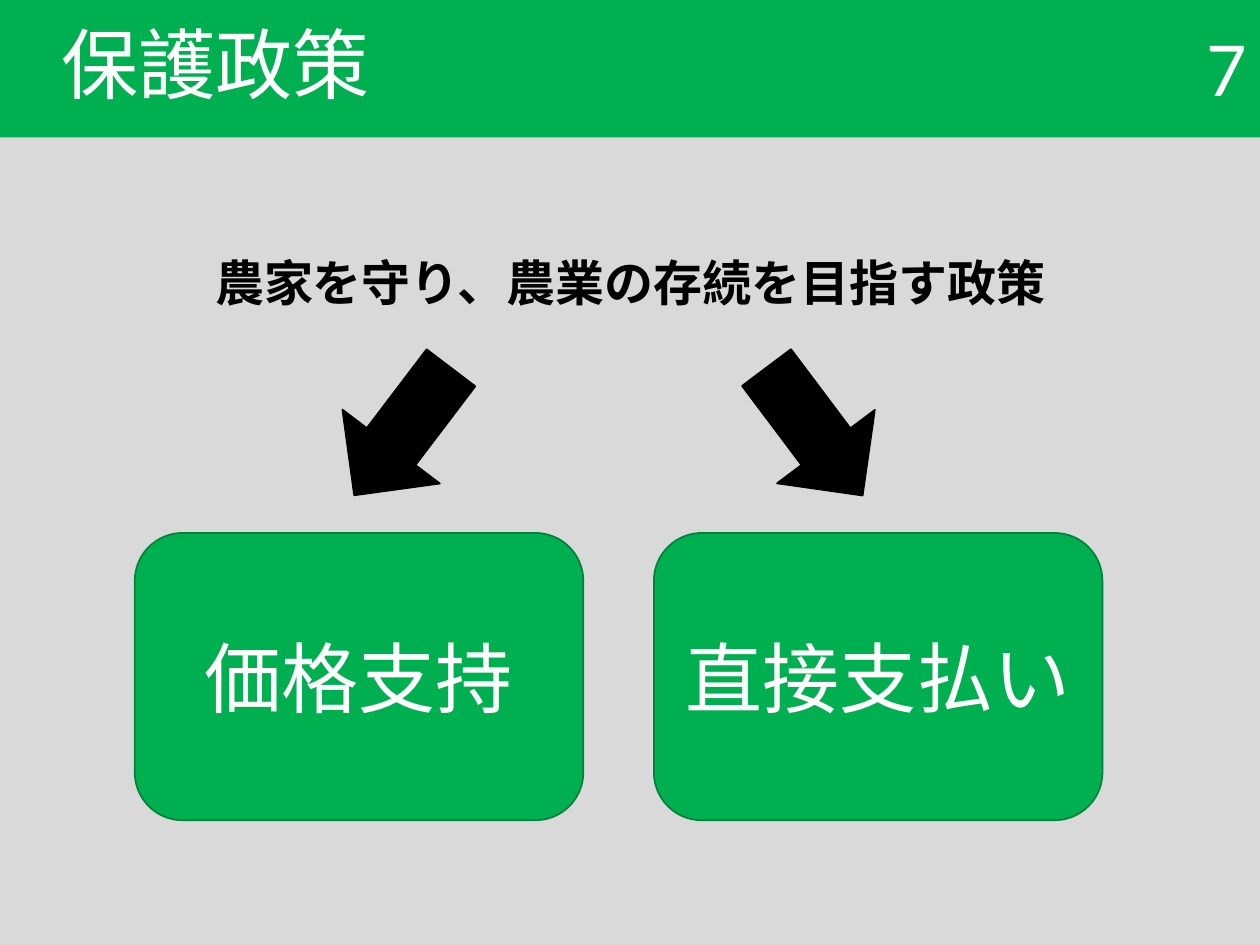
from lxml.etree import SubElement
from pptx import Presentation
from pptx.dml.color import RGBColor
from pptx.enum.shapes import MSO_SHAPE as Shape
from pptx.enum.text import MSO_ANCHOR as Anchor, MSO_AUTO_SIZE as AutoSize, PP_ALIGN as Align
from pptx.oxml.ns import qn
from pptx.util import Inches, Pt

GREEN, EDGE, GREY, BLACK, WHITE = "00B050", "00823B", "D9D9D9", "000000", "FFFFFF"


def paint(target, color):
    if hasattr(target, "solid"):
        target.solid()
        target = target.fore_color
    else:
        target = target.color
    target.rgb = RGBColor.from_string(color)


def write(box, text, size, color, align, anchor=Anchor.MIDDLE, bold=False, **spacing):
    frame = box.text_frame
    frame_format = {"word_wrap": True, "auto_size": AutoSize.NONE, "vertical_anchor": anchor}
    for name, value in frame_format.items():
        setattr(frame, name, value)
    para = frame.paragraphs[0]
    for name, value in {"alignment": align, **spacing}.items():
        setattr(para, name, value)
    span = para.add_run()
    span.text = text
    for name, value in {"name": "Lato", "size": Pt(size), "bold": bold}.items():
        setattr(span.font, name, value)
    paint(span.font, color)


deck = Presentation()
deck.slide_width, deck.slide_height = Inches(10), Inches(7.5)
page = deck.slides.add_slide(deck.slide_layouts[1])
paint(page.background.fill, GREY)
title, body = page.placeholders
header_height = Inches(1.09)

places = [
    (title, (0, 0, deck.slide_width, header_height)),
    (body, (Inches(0.69), Inches(2.01), Inches(8.62), Inches(4.75))),
]
for box, place in places:
    for name, value in zip(("left", "top", "width", "height"), place):
        setattr(box, name, value)

paint(title.fill, GREEN)
title.text_frame.margin_left = Inches(0.49)
write(title, "保護政策", 44, WHITE, Align.LEFT, line_spacing=0.9)

write(body, "農家を守り、農業の存続を目指す政策", 28, BLACK, Align.CENTER,
      Anchor.TOP, True, line_spacing=0.9, space_before=Pt(12))
body_props = body.text_frame.paragraphs[0]._p.get_or_add_pPr()
for name in ("marL", "indent"):
    body_props.set(name, "0")
SubElement(body_props, qn("a:buNone"))

number = page.shapes.add_textbox(Inches(8.06), 0, Inches(1.94), header_height)
write(number, "7", 40, WHITE, Align.RIGHT)

arrows = [(Shape.DOWN_ARROW, left, 2.79, 0.97, 1.27, turn, BLACK, BLACK, "")
          for left, turn in ((2.71, 37.2), (5.98, 323.1))]
cards = [(Shape.ROUNDED_RECTANGLE, 1.07 + 4.12 * column, 4.23, 3.56, 2.28, 0, GREEN, EDGE, label)
         for column, label in enumerate(("価格支持", "直接支払い"))]
for kind, left, top, width, height, turn, fill, edge, label in arrows + cards:
    box = page.shapes.add_shape(kind, Inches(left), Inches(top), Inches(width), Inches(height))
    box.rotation = turn
    box.shadow.inherit = False
    paint(box.fill, fill)
    paint(box.line.fill, edge)
    box.line.width = Pt(1)
    if label:
        write(box, label, 44, WHITE, Align.CENTER)

deck.save("out.pptx")
